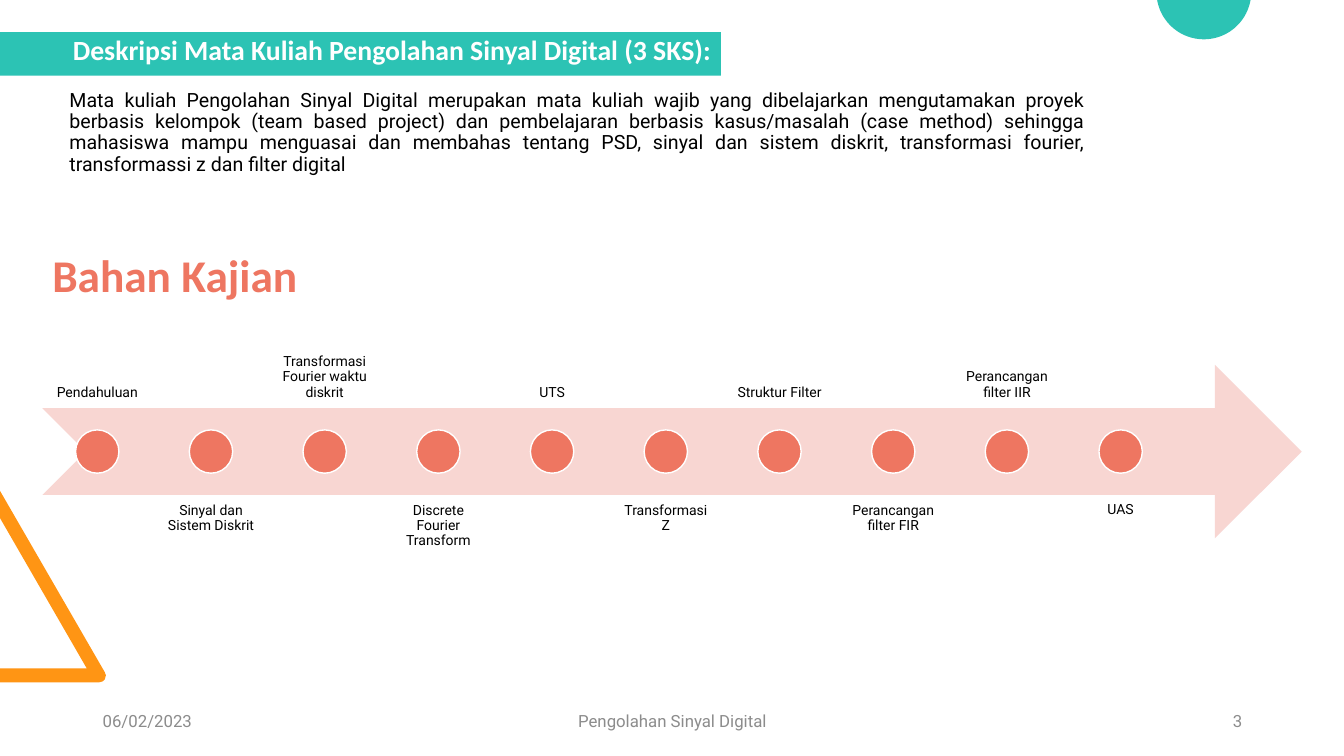
"""Build a course description slide with a timeline of study topics."""
import math

from pptx import Presentation
from pptx import util as u
from pptx.dml.color import RGBColor
from pptx.enum import shapes, text

COLORS = {"teal": "2CC3B4", "coral": "EE7661", "pink": "F8D6D2", "orange": "FF9514",
          "gray": "8C8C8C", "black": "000000", "white": "FFFFFF"}
ALIGN, ANCHOR, SHAPE = text.PP_ALIGN, text.MSO_ANCHOR, shapes.MSO_SHAPE
TOPICS = ["Pendahuluan", "Sinyal dan Sistem Diskrit", "Transformasi Fourier waktu diskrit",
          "Discrete Fourier Transform", "UTS", "Transformasi Z", "Struktur Filter",
          "Perancangan filter FIR", "Perancangan filter IIR", "UAS"]
DESCRIPTION = (
    "Mata kuliah Pengolahan Sinyal Digital merupakan mata kuliah wajib yang dibelajarkan "
    "mengutamakan proyek berbasis kelompok (team based project) dan pembelajaran berbasis "
    "kasus/masalah (case method) sehingga mahasiswa mampu menguasai dan membahas tentang PSD, "
    "sinyal dan sistem diskrit, transformasi fourier, transformassi z dan filter digital")


def rgb(name):
    """Return the named colour."""
    return RGBColor.from_string(COLORS[name])


def paint(sp, fill, line=None):
    """Give a shape a flat fill and an optional thin outline."""
    sp.shadow.inherit = False
    sp.fill.solid()
    sp.fill.fore_color.rgb = rgb(fill)
    if line:
        sp.line.color.rgb = rgb(line)
        sp.line.width = u.Pt(1)
    else:
        sp.line.fill.background()
    return sp


def add_preset(s, kind, box, fill, line=None):
    """Add a painted preset shape in a box given in inches."""
    return paint(s.shapes.add_shape(kind, *map(u.Inches, box)), fill, line)


def add_outline(s, points, fill):
    """Add a painted closed outline through points given in inches."""
    start, *rest = [(u.Inches(x), u.Inches(y)) for x, y in points]
    builder = s.shapes.build_freeform(*start)
    builder.add_line_segments(rest)
    return paint(builder.convert_to_shape(), fill)


def write(sp, words, size, color, frame=None, para=None, font=None):
    """Write one formatted paragraph into a shape."""
    tf = sp.text_frame
    p = tf.paragraphs[0]
    r = p.add_run()
    r.text = words
    r.font.color.rgb = rgb(color)
    formats = [(tf, {"word_wrap": True, **(frame or {})}),
               (p, {"alignment": ALIGN.LEFT, **(para or {})}),
               (r.font, {"size": u.Pt(size), "name": "Roboto", **(font or {})})]
    for target, values in formats:
        for name, value in values.items():
            setattr(target, name, value)


def add_text(s, box, *args, **formats):
    """Add a text box in a box given in inches."""
    write(s.shapes.add_textbox(*map(u.Inches, box)), *args, **formats)


def add_decor(s):
    """Draw the cut triangle at the left and the cut circle at the top."""
    add_outline(s, [(0, 6.77), (0, 6.63), (0.86, 6.63), (0, 5.14), (0, 4.87), (1.04, 6.67),
                    (1.05, 6.7), (1.04, 6.74), (1.02, 6.76), (0.98, 6.77)], "orange")
    cx, cy, radius, steps = 11.94, -0.08, 0.47, 48
    first = math.asin(-cy / radius)
    angles = [first + (math.pi - 2 * first) * i / steps for i in range(steps + 1)]
    add_outline(s, [(cx + radius * math.cos(a), cy + radius * math.sin(a)) for a in angles], "teal")


def add_header(s, x, y, w, h):
    """Place the heading band with the course description under it."""
    band = add_preset(s, SHAPE.RECTANGLE, (x, y, w, h), "teal")
    write(band, "Deskripsi Mata Kuliah Pengolahan Sinyal Digital (3 SKS):", 19.8, "white",
          frame={"vertical_anchor": ANCHOR.MIDDLE},
          para={"alignment": ALIGN.RIGHT, "line_spacing": 0.7},
          font={"name": "Calibri", "bold": True})
    add_text(s, (x + 0.59, y + h + 0.1, 10.27, 1.38), DESCRIPTION, 14, "black",
             para={"alignment": ALIGN.JUSTIFY, "line_spacing": 0.9, "space_before": u.Pt(10)})


def add_title(s, x, y, w, h):
    """Place the section title."""
    add_text(s, (x, y, w, h), "Bahan Kajian", 32.4, "coral",
             frame={"vertical_anchor": ANCHOR.MIDDLE}, para={"line_spacing": 0.9},
             font={"name": "Calibri", "bold": True})


def add_timeline(s, x, y, w, h):
    """Place the arrow with its dots and labels alternating above and below."""
    add_preset(s, SHAPE.NOTCHED_RIGHT_ARROW, (x, y, w, h), "pink")
    dot, label_w = h / 4, 1.07
    pitch = 10.15 / (len(TOPICS) - 1)
    insets = {f"margin_{side}": u.Inches(0.08) for side in ("left", "right", "top", "bottom")}
    for i, topic in enumerate(TOPICS):
        cx = x + 0.545 + i * pitch
        below = i % 2
        top = y + 0.75 * h if below else y - 0.75 * h
        anchor = ANCHOR.TOP if below else ANCHOR.BOTTOM
        add_text(s, (cx - label_w / 2, top, label_w, h), topic, 10, "black",
                 frame={"vertical_anchor": anchor, **insets},
                 para={"alignment": ALIGN.CENTER, "line_spacing": 0.9})
        add_preset(s, SHAPE.OVAL, (cx - dot / 2, y + (h - dot) / 2, dot, dot), "coral", "white")


def add_footer(s, x, y, w, h):
    """Place the date, course name and page number along the bottom."""
    side = 3
    parts = [("06/02/2023", x, side, ALIGN.LEFT),
             ("Pengolahan Sinyal Digital", x + side + 0.5, w - 2 * side - 1, ALIGN.CENTER),
             ("3", x + w - side, side, ALIGN.RIGHT)]
    for words, left, width, align in parts:
        add_text(s, (left, y, width, h), words, 12, "gray",
                 frame={"vertical_anchor": ANCHOR.MIDDLE}, para={"alignment": align})


def main():
    """Build and save the slide."""
    prs = Presentation()
    prs.slide_width, prs.slide_height = u.Inches(13.33), u.Inches(7.5)
    s = prs.slides.add_slide(prs.slide_layouts[6])
    add_decor(s)
    add_title(s, 0.42, 2.44, 11.08, 0.63)
    add_footer(s, 0.92, 6.95, 11.5, 0.4)
    add_timeline(s, 0.42, 3.62, 12.49, 1.72)
    add_header(s, 0, 0.32, 7.15, 0.43)
    prs.save("out.pptx")


if __name__ == "__main__":
    main()
